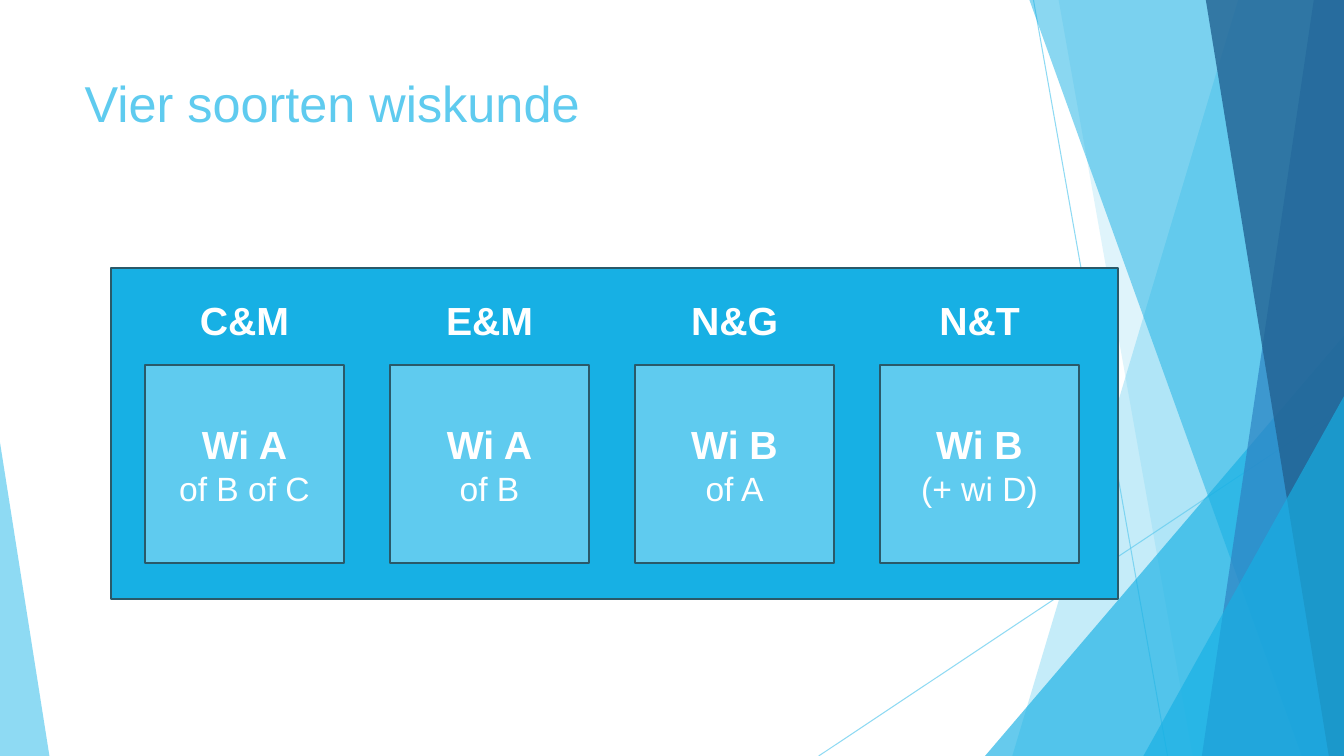
from dataclasses import dataclass

from lxml.etree import SubElement
from pptx import Presentation
from pptx.dml.color import RGBColor
from pptx.enum.shapes import MSO_CONNECTOR, MSO_SHAPE
from pptx.enum.text import MSO_ANCHOR, MSO_AUTO_SIZE, PP_ALIGN
from pptx.oxml.ns import qn
from pptx.util import Inches, Pt


@dataclass(frozen=True)
class Theme:
    font: str = "Arial"
    sky: str = "5FCBEF"
    cyan: str = "17B0E4"
    blue: str = "2E83C3"
    navy: str = "226292"
    outline: str = "2A5969"
    white: str = "FFFFFF"
    title_size: int = 36
    heading_size: int = 28
    detail_size: int = 24


theme = Theme()
WIDTH, HEIGHT = 13.33, 7.5


def set_alpha(element, percent):
    color = element.spPr.find(".//" + qn("a:srgbClr"))
    SubElement(color, qn("a:alpha")).set("val", str(percent * 1000))


def add_run(paragraph, text, size, color, bold=False, align=PP_ALIGN.CENTER):
    paragraph.alignment = align
    run = paragraph.add_run()
    run.text = text
    run.font.name = theme.font
    run.font.size = Pt(size)
    run.font.bold = bold
    run.font.color.rgb = RGBColor.from_string(color)


prs = Presentation()
prs.slide_width, prs.slide_height = Inches(WIDTH), Inches(HEIGHT)
slide = prs.slides.add_slide(prs.slide_layouts[5])

title = slide.shapes.title
title.left, title.top = Inches(0.74), Inches(0.67)
title.width, title.height = Inches(9.4), Inches(1.04)
title.text_frame.vertical_anchor = MSO_ANCHOR.TOP
title.text_frame.auto_size = MSO_AUTO_SIZE.NONE
add_run(title.text_frame.paragraphs[0], "Vier soorten wiskunde",
        theme.title_size, theme.sky, align=PP_ALIGN.LEFT)

facets = slide.shapes.add_group_shape().shapes

for x1, y1, x2, y2 in [(10.25, 0, 11.58, HEIGHT), (WIDTH, 4.03, 8.12, HEIGHT)]:
    ray = facets.add_connector(MSO_CONNECTOR.STRAIGHT, Inches(x1), Inches(y1), Inches(x2), Inches(y2))
    ray.line.width = Pt(0.75)
    ray.line.color.rgb = RGBColor.from_string(theme.sky)
    set_alpha(ray.element, 70)
    SubElement(ray.element.spPr, qn("a:effectLst"))

facet_rows = [
    ("band", (12.28, 10.04), theme.sky, 36),
    ("band", (10.5, 11.83), theme.sky, 20),
    ("corner", (9.77, 3.33, 3.56, 1), theme.cyan, 66),
    ("band", (10.21, 12.91), theme.cyan, 50),
    ("band", (13.03, 11.92), theme.blue, 70),
    ("band", (11.96, 13.18), theme.navy, 80),
    ("corner", (11.34, 3.93, 1.99, 1), theme.cyan, 66),
    ("corner", (0, 4.39, 0.49, 0), theme.sky, 70),
]
for kind, geometry, color, opacity in facet_rows:
    if kind == "band":
        top_x, bottom_x = geometry
        outline = facets.build_freeform(Inches(top_x), 0)
        outline.add_line_segments([
            (Inches(WIDTH), 0),
            (Inches(WIDTH), Inches(HEIGHT)),
            (Inches(bottom_x), Inches(HEIGHT)),
        ], close=True)
        facet = outline.convert_to_shape()
    else:
        left, top, width, apex = geometry
        facet = facets.add_shape(MSO_SHAPE.ISOSCELES_TRIANGLE, Inches(left), Inches(top),
                                 Inches(width), Inches(HEIGHT - top))
        facet.adjustments[0] = apex
    facet.shadow.inherit = False
    facet.fill.solid()
    facet.fill.fore_color.rgb = RGBColor.from_string(color)
    facet.line.fill.background()
    set_alpha(facet.element, opacity)

overview = slide.shapes.add_group_shape().shapes
profiles = [
    ("C&M", "Wi A", "of B of C"),
    ("E&M", "Wi A", "of B"),
    ("N&G", "Wi B", "of A"),
    ("N&T", "Wi B", "(+ wi D)"),
]
CARD_LEFT, CARD_TOP, CARD_SIZE, CARD_PITCH = 1.44, 3.62, 1.97, 2.43
LABEL_WIDTH = 1.42

rectangles = [(1.1, 2.66, 9.99, 3.28, theme.cyan, [])]
for column, (profile, subject, choice) in enumerate(profiles):
    rectangles.append((CARD_LEFT + column * CARD_PITCH, CARD_TOP, CARD_SIZE, CARD_SIZE, theme.sky,
                       [(subject, theme.heading_size, True), (choice, theme.detail_size, False)]))

for left, top, width, height, color, lines in rectangles:
    card = overview.add_shape(MSO_SHAPE.RECTANGLE, Inches(left), Inches(top), Inches(width), Inches(height))
    card.shadow.inherit = False
    card.fill.solid()
    card.fill.fore_color.rgb = RGBColor.from_string(color)
    card.line.color.rgb = RGBColor.from_string(theme.outline)
    card.line.width = Pt(1.5)
    frame = card.text_frame
    frame.vertical_anchor = MSO_ANCHOR.MIDDLE
    for row, (text, size, bold) in enumerate(lines):
        paragraph = frame.add_paragraph() if row else frame.paragraphs[0]
        add_run(paragraph, text, size, theme.white, bold)

for column, (profile, subject, choice) in enumerate(profiles):
    label_left = CARD_LEFT + column * CARD_PITCH + (CARD_SIZE - LABEL_WIDTH) / 2
    label = overview.add_textbox(Inches(label_left), Inches(2.89), Inches(LABEL_WIDTH), Inches(0.57))
    label.text_frame.word_wrap = True
    label.text_frame.auto_size = MSO_AUTO_SIZE.SHAPE_TO_FIT_TEXT
    add_run(label.text_frame.paragraphs[0], profile, theme.heading_size, theme.white, True)

prs.save("out.pptx")
